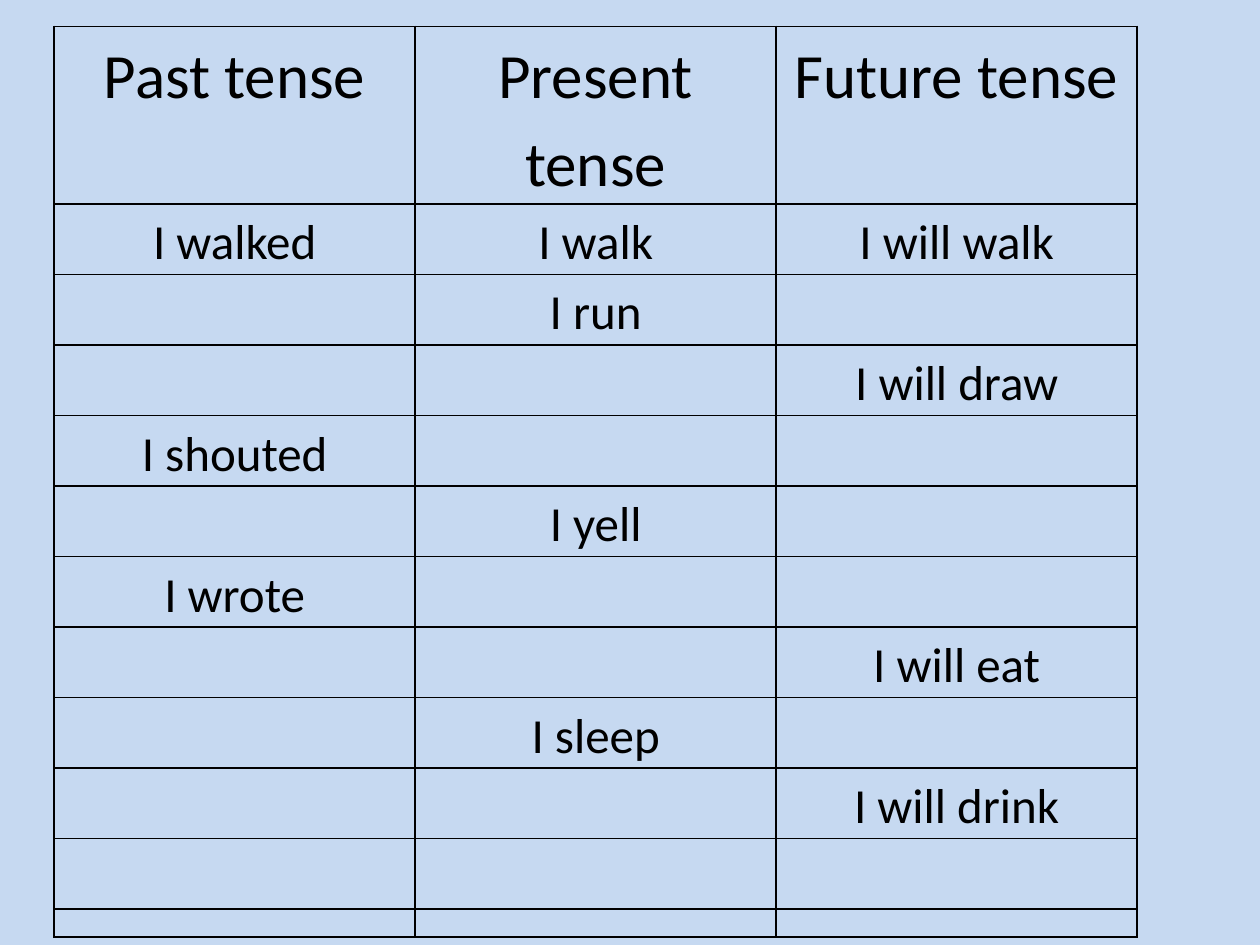
"""Build a slide with a verb tense worksheet table."""
import pptx
import pptx.dml.color
import pptx.enum.text
import pptx.oxml
import pptx.oxml.ns
import pptx.util

BLACK = pptx.dml.color.RGBColor(0x00, 0x00, 0x00)
PALE_BLUE = pptx.dml.color.RGBColor(0xC6, 0xD9, 0xF1)
FONT = "Calibri"
HEADER_SIZE, BODY_SIZE, EMPTY_SIZE = 36, 28, 11

TENSES = [
    ("Past tense", "Present tense", "Future tense"),
    ("I walked", "I walk", "I will walk"),
    ("", "I run", ""),
    ("", "", "I will draw"),
    ("I shouted", "", ""),
    ("", "I yell", ""),
    ("I wrote", "", ""),
    ("", "", "I will eat"),
    ("", "I sleep", ""),
    ("", "", "I will drink"),
    ("", "", ""),
    ("", "", ""),
]
LEFT, TOP = 0.43, 0.21
COLUMN_WIDTH = 2.865
HEADER_HEIGHT, BODY_HEIGHT, LAST_HEIGHT = 1.01, 0.56, 0.22


def add_borders(cell):
    """Draw a thin black line on every side of a cell."""
    properties = cell._tc.get_or_add_tcPr()
    for side in ("lnL", "lnR", "lnT", "lnB"):
        properties.append(pptx.oxml.parse_xml(
            f'<a:{side} {pptx.oxml.ns.nsdecls("a")} w="{pptx.util.Pt(1)}">'
            f'<a:solidFill><a:srgbClr val="{BLACK}"/></a:solidFill></a:{side}>'))


def write_cell(cell, text, size):
    """Format a cell and write its text."""
    add_borders(cell)
    cell.fill.background()
    cell.margin_left = cell.margin_right = pptx.util.Inches(0.05)
    cell.margin_top = cell.margin_bottom = 0
    paragraph = cell.text_frame.paragraphs[0]
    paragraph.alignment = pptx.enum.text.PP_ALIGN.CENTER
    paragraph.line_spacing = 1.15
    if text:
        run = paragraph.add_run()
        run.text = text
        run.font.name = FONT
        run.font.size = pptx.util.Pt(size)
        run.font.color.rgb = BLACK
    else:
        paragraph._p.append(pptx.oxml.parse_xml(
            f'<a:endParaRPr {pptx.oxml.ns.nsdecls("a")} sz="{EMPTY_SIZE * 100}">'
            f'<a:latin typeface="{FONT}"/></a:endParaRPr>'))


def main():
    """Create and save the presentation."""
    presentation = pptx.Presentation()
    presentation.slide_width = pptx.util.Inches(10)
    presentation.slide_height = pptx.util.Inches(7.5)
    slide = presentation.slides.add_slide(presentation.slide_layouts[6])
    slide.background.fill.solid()
    slide.background.fill.fore_color.rgb = PALE_BLUE

    heights = [HEADER_HEIGHT] + [BODY_HEIGHT] * (len(TENSES) - 2) + [LAST_HEIGHT]
    columns = len(TENSES[0])
    bounds = (LEFT, TOP, COLUMN_WIDTH * columns, sum(heights))
    table = slide.shapes.add_table(
        len(TENSES), columns, *map(pptx.util.Inches, bounds)).table
    table.first_row = table.horz_banding = False
    for row_index, (texts, height) in enumerate(zip(TENSES, heights)):
        table.rows[row_index].height = pptx.util.Inches(height)
        size = BODY_SIZE if row_index else HEADER_SIZE
        for column_index, text in enumerate(texts):
            write_cell(table.cell(row_index, column_index), text, size)

    presentation.save("out.pptx")


if __name__ == "__main__":
    main()
